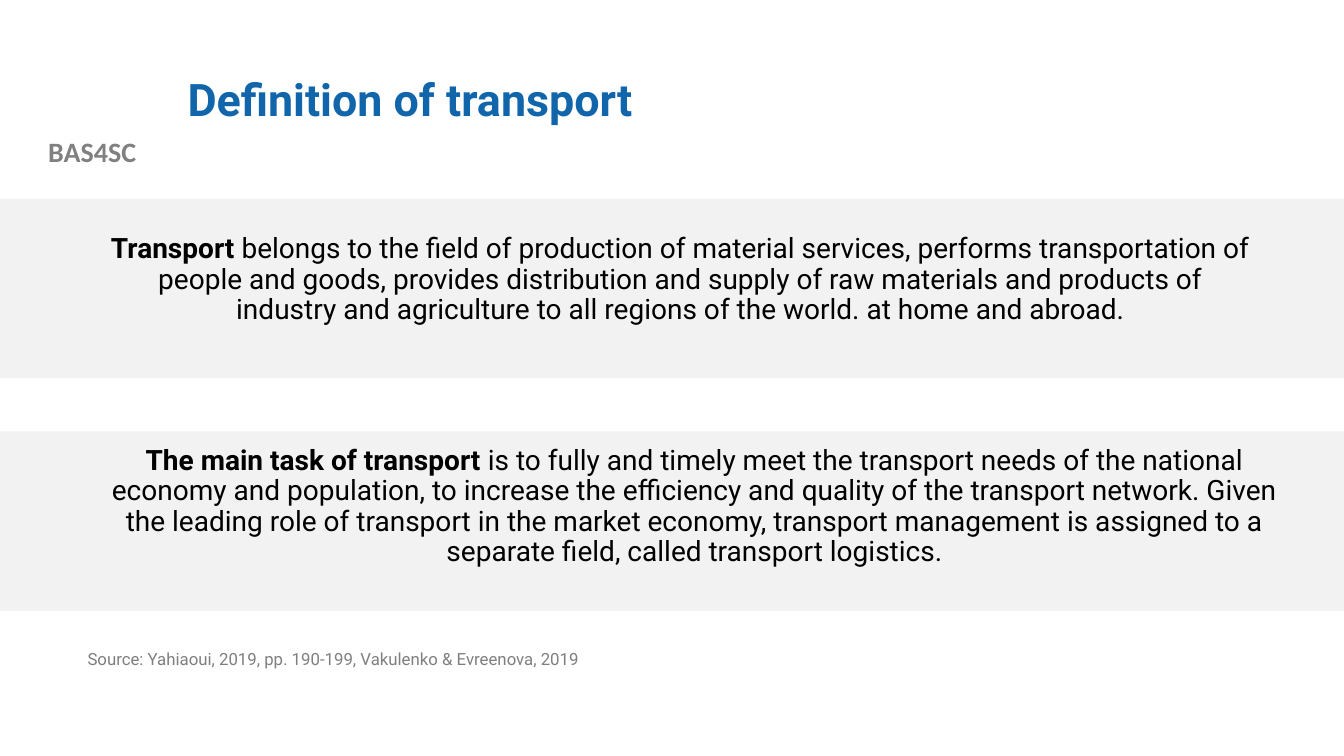
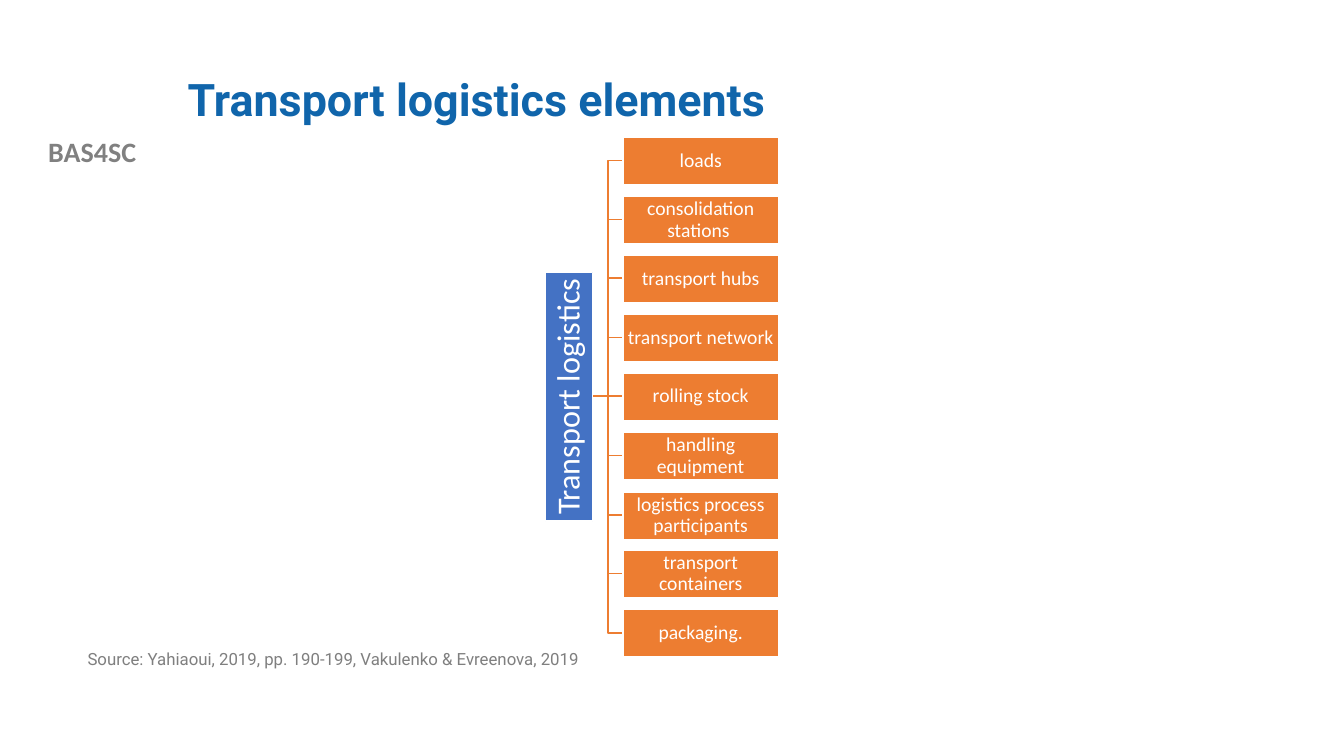
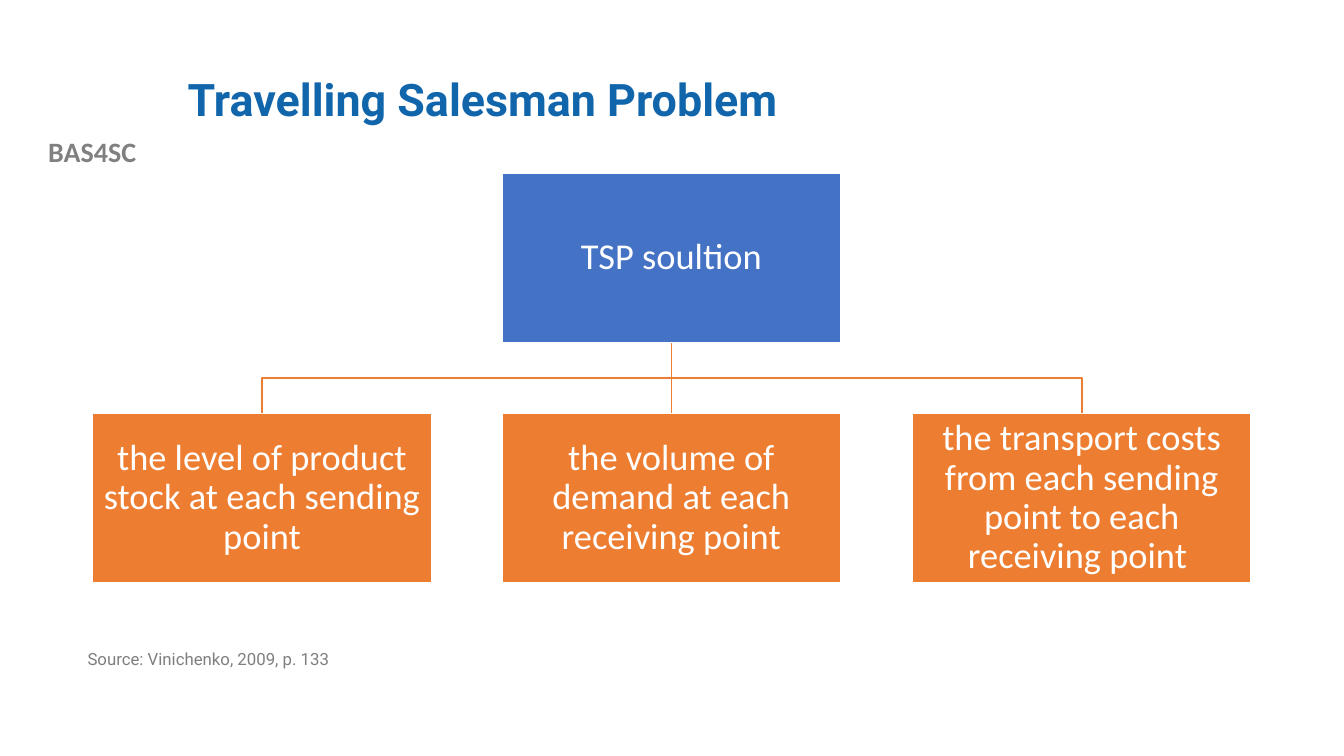
from dataclasses import dataclass
from typing import NamedTuple

from lxml.etree import SubElement
from pptx import Presentation
from pptx.dml.color import RGBColor
from pptx.enum.shapes import MSO_CONNECTOR, MSO_SHAPE
from pptx.enum.text import MSO_ANCHOR, PP_ALIGN
from pptx.oxml.ns import qn
from pptx.shapes.base import BaseShape
from pptx.slide import Slide
from pptx.text.text import TextFrame
from pptx.util import Emu, Pt

EMU_PER_PX = 9144  # 100 px to the inch
SLIDE_WIDTH, SLIDE_HEIGHT = 1333, 750


@dataclass(frozen=True)
class TextStyle:
    font: str
    size: int
    color: str
    bold: bool = False
    align: PP_ALIGN = PP_ALIGN.LEFT
    line_spacing: float = 0.9


@dataclass(frozen=True)
class Theme:
    band: str = "F2F2F2"
    root: str = "4472C4"
    branch: str = "ED7D31"
    outline: str = "FFFFFF"
    title: TextStyle = TextStyle("Roboto", 32, "1065AB", bold=True)
    body: TextStyle = TextStyle("Roboto", 20, "000000", align=PP_ALIGN.CENTER)
    source: TextStyle = TextStyle("Roboto", 12, "7F7F7F")
    label: TextStyle = TextStyle("Calibri", 20, "808080", True, PP_ALIGN.CENTER, 1.0)
    list_root: TextStyle = TextStyle("Calibri", 23, "FFFFFF", align=PP_ALIGN.CENTER)
    list_item: TextStyle = TextStyle("Calibri", 14, "FFFFFF", align=PP_ALIGN.CENTER)
    chart_node: TextStyle = TextStyle("Calibri", 26, "FFFFFF", align=PP_ALIGN.CENTER)


THEME = Theme()


class Point(NamedTuple):
    x: int
    y: int


class Box(NamedTuple):
    left: int
    top: int
    width: int
    height: int

    @property
    def center(self) -> Point:
        return Point(self.left + self.width // 2, self.top + self.height // 2)


class Node(NamedTuple):
    text: str
    box: Box
    fill: str
    style: TextStyle
    inset: int
    rotation: int = 0


class Statement(NamedTuple):
    band: Box
    text_box: Box
    lead: str
    rest: str


TITLE_BOX = Box(176, 40, 1066, 122)
WIDE_TITLE_BOX = TITLE_BOX._replace(width=1157)
LABEL_BOX = Box(0, 129, 183, 44)
SOURCE_BOX = Box(77, 641, 560, 52)
TRANSPORT_SOURCE = "Source: Yahiaoui, 2019, pp. 190-199, Vakulenko & Evreenova, 2019"

STATEMENTS = [
    Statement(
        Box(0, 428, SLIDE_WIDTH, 178), Box(93, 438, 1192, 169), "The main task of transport ",
        "is to fully and timely meet the transport needs of the national economy and "
        "population, to increase the efficiency and quality of the transport network. Given "
        "the leading role of transport in the market economy, transport management is "
        "assigned to a separate field, called transport logistics.",
    ),
    Statement(
        Box(0, 197, SLIDE_WIDTH, 178), Box(100, 228, 1150, 169), "Transport ",
        "belongs to the field of production of material services, performs transportation "
        "of people and goods, provides distribution and supply of raw materials and products "
        "of industry and agriculture to all regions of the world. at home and abroad.",
    ),
]

LOGISTICS_ELEMENTS = [
    "loads", "consolidation stations ", "transport hubs", "transport network",
    "rolling stock", "handling equipment", "logistics process participants",
    "transport containers", "packaging.",
]

SALESMAN_INPUTS = [
    "the level of product stock at each sending point",
    "the volume of demand at each receiving point",
    "the transport costs from each sending point to each receiving point ",
]


# Basic drawing
def px(length: int) -> Emu:
    return Emu(length * EMU_PER_PX)


def place(shape: BaseShape, box: Box) -> None:
    shape.left, shape.top, shape.width, shape.height = map(px, box)


def write(frame: TextFrame, text: str, style: TextStyle, lead: str = "") -> None:
    frame.word_wrap = True
    paragraph = frame.paragraphs[0]
    paragraph.alignment = style.align
    paragraph.line_spacing = style.line_spacing
    paragraph.space_before = Pt(0)
    font = paragraph.font
    font.name, font.size, font.bold = style.font, Pt(style.size), style.bold
    font.color.rgb = RGBColor.from_string(style.color)
    if lead:
        lead_run = paragraph.add_run()
        lead_run.text = lead
        lead_run.font.bold = True
    paragraph.add_run().text = text


def add_text(slide: Slide, box: Box, text: str, style: TextStyle, lead: str = "") -> None:
    write(slide.shapes.add_textbox(*map(px, box)).text_frame, text, style, lead)


def add_rectangle(slide: Slide, box: Box, fill: str, outline: str = "") -> BaseShape:
    shape = slide.shapes.add_shape(MSO_SHAPE.RECTANGLE, *map(px, box))
    shape.shadow.inherit = False
    shape.fill.solid()
    shape.fill.fore_color.rgb = RGBColor.from_string(fill)
    if outline:
        shape.line.color.rgb = RGBColor.from_string(outline)
        shape.line.width = Pt(1)
    else:
        shape.line.fill.background()
    return shape


def add_node(slide: Slide, node: Node) -> None:
    shape = add_rectangle(slide, node.box, node.fill, THEME.outline)
    shape.rotation = node.rotation
    frame = shape.text_frame
    frame.vertical_anchor = MSO_ANCHOR.MIDDLE
    frame.margin_left = frame.margin_right = px(node.inset)
    frame.margin_top = frame.margin_bottom = px(node.inset)
    write(frame, node.text, node.style)


def add_branch(slide: Slide, start: Point, *others: Point) -> None:
    """Draw a bent outline, or a plain connector where the ends are in line."""
    end = others[-1]
    if start.x == end.x or start.y == end.y:
        branch = slide.shapes.add_connector(
            MSO_CONNECTOR.STRAIGHT, *map(px, start), *map(px, end))
        SubElement(branch._element.spPr, qn("a:effectLst"))
    else:
        builder = slide.shapes.build_freeform(*start, scale=EMU_PER_PX)
        builder.add_line_segments(others, close=False)
        branch = builder.convert_to_shape()
        branch.shadow.inherit = False
        branch.fill.background()
    branch.line.color.rgb = RGBColor.from_string(THEME.branch)
    branch.line.width = Pt(1)


# Shared slide frame: title, project label, source
def add_framed_slide(
    presentation: Presentation, title: str, source: str, title_box: Box = TITLE_BOX
) -> Slide:
    slide = presentation.slides.add_slide(presentation.slide_layouts.get_by_name("Title Only"))
    place(slide.shapes.title, title_box)
    slide.shapes.title.text_frame.vertical_anchor = MSO_ANCHOR.MIDDLE
    write(slide.shapes.title.text_frame, title, THEME.title)
    add_text(slide, LABEL_BOX, "BAS4SC", THEME.label)
    add_text(slide, SOURCE_BOX, source, THEME.source)
    return slide


# Slides
def build_definition(presentation: Presentation) -> None:
    slide = add_framed_slide(presentation, "Definition of transport", TRANSPORT_SOURCE)
    for statement in STATEMENTS:
        add_rectangle(slide, statement.band, THEME.band)
        add_text(slide, statement.text_box, statement.rest, THEME.body, statement.lead)


def build_elements(presentation: Presentation) -> None:
    slide = add_framed_slide(presentation, "Transport logistics elements", TRANSPORT_SOURCE)
    first_top, last_top = 136, 605
    step = (last_top - first_top) / (len(LOGISTICS_ELEMENTS) - 1)
    items = [
        Node(text, Box(618, first_top + round(index * step), 154, 47),
             THEME.branch, THEME.list_item, 1)
        for index, text in enumerate(LOGISTICS_ELEMENTS)
    ]
    root = Node("Transport logistics", Box(441, 370, 247, 47), THEME.root,
                THEME.list_root, 2, rotation=270)

    trunk_x = 603
    start = Point(root.box.center.x + (root.box.height + 1) // 2, root.box.center.y)
    for item in reversed(items):
        end = Point(item.box.left, item.box.center.y)
        add_branch(slide, start, Point(trunk_x, start.y), Point(trunk_x, end.y), end)
    for node in [root, *items]:
        add_node(slide, node)


def build_salesman(presentation: Presentation) -> None:
    slide = add_framed_slide(presentation, "Travelling Salesman Problem",
                             "Source: Vinichenko, 2009, p. 133", WIDE_TITLE_BOX)
    width, height, first_left, last_left = 336, 168, 92, 905
    step = (last_left - first_left) / (len(SALESMAN_INPUTS) - 1)
    inputs = [
        Node(text, Box(first_left + int(index * step), 410, width, height),
             THEME.branch, THEME.chart_node, 2)
        for index, text in enumerate(SALESMAN_INPUTS)
    ]
    root = Node("TSP soultion", inputs[1].box._replace(top=172),
                THEME.root, THEME.chart_node, 2)

    trunk_y = 375
    start = Point(root.box.center.x, root.box.top + height)
    for node in reversed(inputs):
        end = Point(node.box.center.x, node.box.top)
        add_branch(slide, start, Point(start.x, trunk_y), Point(end.x, trunk_y), end)
    for node in [root, *inputs]:
        add_node(slide, node)


def main() -> None:
    presentation = Presentation()
    presentation.slide_width = px(SLIDE_WIDTH)
    presentation.slide_height = px(SLIDE_HEIGHT)
    build_definition(presentation)
    build_elements(presentation)
    build_salesman(presentation)
    presentation.save("out.pptx")


if __name__ == "__main__":
    main()
